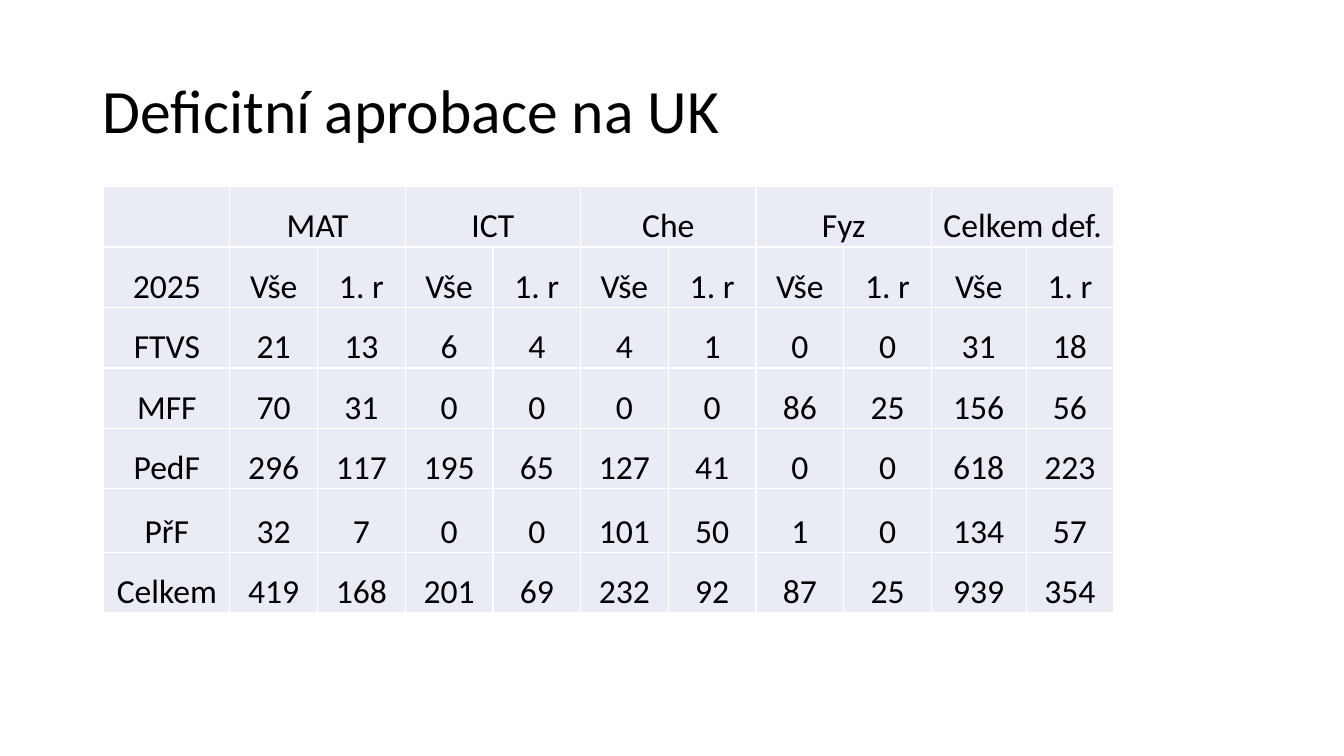
"""Build the slide with the table of shortage teaching subjects."""
from lxml import etree
from pptx import Presentation
from pptx.dml.color import RGBColor
from pptx.enum import text as t
from pptx.oxml import ns
from pptx.util import Inches, Pt

TITLE = "Deficitní aprobace na UK"
SUBJECTS = ["MAT", "ICT", "Che", "Fyz", "Celkem def."]
YEAR = "2025"
MEASURES = ["Vše", "1. r"]
FACULTIES = [
    ("FTVS", 21, 13, 6, 4, 4, 1, 0, 0, 31, 18),
    ("MFF", 70, 31, 0, 0, 0, 0, 86, 25, 156, 56),
    ("PedF", 296, 117, 195, 65, 127, 41, 0, 0, 618, 223),
    ("PřF", 32, 7, 0, 0, 101, 50, 1, 0, 134, 57),
    ("Celkem", 419, 168, 201, 69, 232, 92, 87, 25, 939, 354),
]
COLUMN_WIDTHS = [1.25] + [0.87] * 8 + [0.94, 0.87]
ROW_HEIGHTS = [0.6] * 5 + [0.63, 0.6]
LEFT, TOP = 1.03, 1.85
INK, CELL_FILL, GRID = "000000", "E9EBF5", "FFFFFF"


def color(value):
    return RGBColor.from_string(value)


def write(frame, words, size=24, align=t.PP_ALIGN.CENTER, spacing=1.0):
    paragraph = frame.paragraphs[0]
    paragraph.alignment = align
    paragraph.line_spacing = spacing
    run = paragraph.add_run()
    run.text = str(words)
    run.font.name = "Calibri"
    run.font.size = Pt(size)
    run.font.color.rgb = color(INK)


def format_cell(cell):
    properties = cell._tc.get_or_add_tcPr()
    for side in ("a:lnL", "a:lnR", "a:lnT", "a:lnB"):
        border = etree.SubElement(properties, ns.qn(side), w=str(Pt(1)))
        fill = etree.SubElement(border, ns.qn("a:solidFill"))
        etree.SubElement(fill, ns.qn("a:srgbClr"), val=GRID)
    cell.fill.solid()
    cell.fill.fore_color.rgb = color(CELL_FILL)
    cell.vertical_anchor = t.MSO_ANCHOR.BOTTOM
    cell.margin_left = cell.margin_right = cell.margin_top = Inches(0.01)
    cell.margin_bottom = 0


def add_title(slide):
    title = slide.shapes.title
    title.left, title.top = Inches(0.92), Inches(0.4)
    title.width, title.height = Inches(11.5), Inches(1.45)
    title.text_frame.vertical_anchor = t.MSO_ANCHOR.MIDDLE
    write(title.text_frame, TITLE, size=44, align=t.PP_ALIGN.LEFT, spacing=0.9)


def add_counts(slide):
    subject_row = [""]
    for subject in SUBJECTS:
        subject_row += [subject, ""]
    rows = [subject_row, [YEAR] + MEASURES * len(SUBJECTS), *FACULTIES]
    counts = slide.shapes.add_table(
        len(rows), len(COLUMN_WIDTHS), Inches(LEFT), Inches(TOP),
        Inches(sum(COLUMN_WIDTHS)), Inches(sum(ROW_HEIGHTS))).table
    counts.first_row = counts.horz_banding = False
    for column, width in zip(counts.columns, COLUMN_WIDTHS):
        column.width = Inches(width)
    for row, height in zip(counts.rows, ROW_HEIGHTS):
        row.height = Inches(height)
    for r, entries in enumerate(rows):
        for c, entry in enumerate(entries):
            cell = counts.cell(r, c)
            format_cell(cell)
            if entry != "":
                write(cell.text_frame, entry)
    for c in range(1, len(COLUMN_WIDTHS), len(MEASURES)):
        counts.cell(0, c).merge(counts.cell(0, c + 1))


def main():
    deck = Presentation()
    deck.slide_width, deck.slide_height = Inches(13.33), Inches(7.5)
    slide = deck.slides.add_slide(deck.slide_layouts[5])
    add_title(slide)
    add_counts(slide)
    deck.save("out.pptx")


if __name__ == "__main__":
    main()
